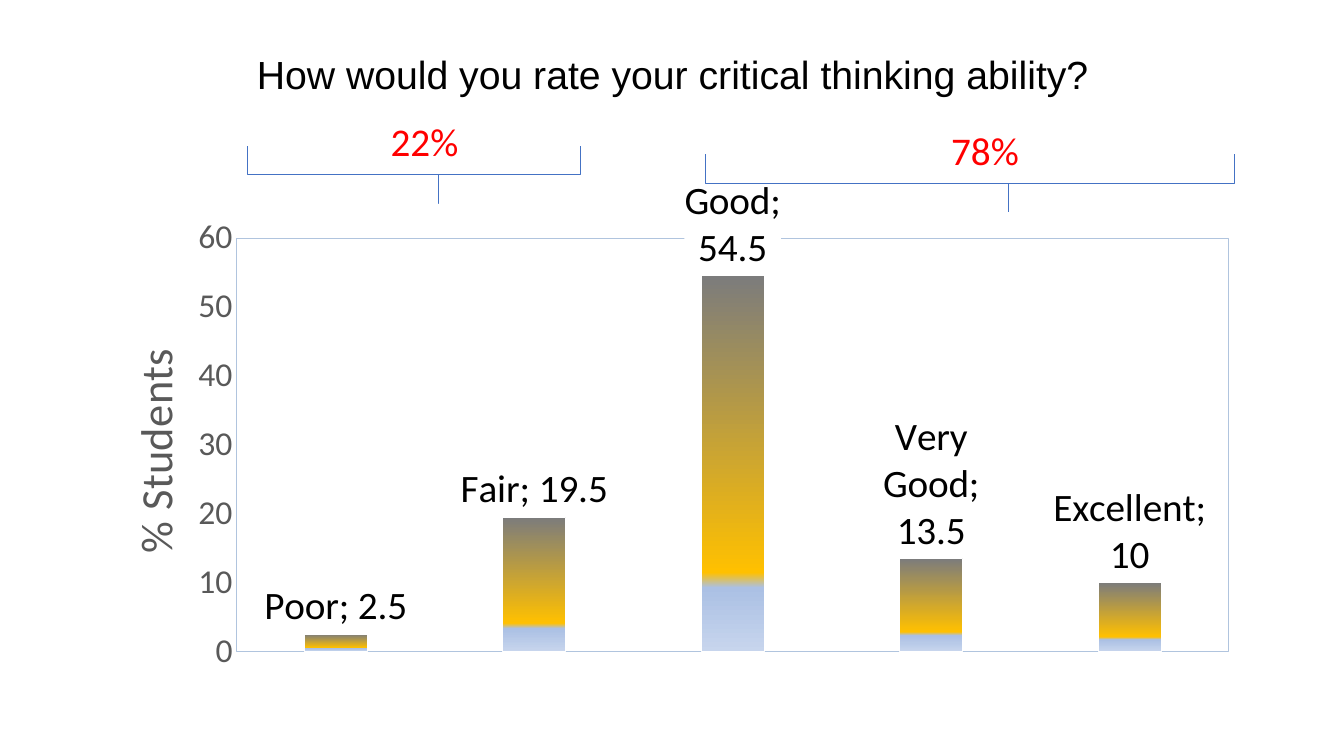
from lxml import etree
from pptx import Presentation, util as u
from pptx.chart.data import CategoryChartData
from pptx.dml.color import RGBColor
from pptx.enum import chart as ch, shapes, text
from pptx.oxml import parse_xml
from pptx.oxml.ns import qn

WIDTH, HEIGHT = u.Inches(13.33), u.Inches(7.5)
RATINGS = {"Poor": 2.5, "Fair": 19.5, "Good": 54.5, "Very Good": 13.5, "Excellent": 10}
BAR_STOPS = ((0, "7C7C7C"), (79, "FFC000"), (83, "ABC0E4"), (100, "C7D5ED"))
BAND = 7.6  # height of a brace and of its label, % of the slide


def rgb(code):
    return RGBColor.from_string(code)


def area(x, y, w, h):
    """Turn percentages of the slide into lengths."""
    return [int(share * side / 100)
            for share, side in zip((x, y, w, h), (WIDTH, HEIGHT) * 2)]


def style(font, size, color, name="Calibri"):
    font.size, font.name, font.bold = u.Pt(size), name, False
    font.color.rgb = rgb(color)


def write(tf, words, **fmt):
    tf.word_wrap = True
    p = tf.paragraphs[0]
    p.alignment = text.PP_ALIGN.CENTER
    r = p.add_run()
    r.text = words
    style(r.font, **fmt)
    return p


def add_title(s, words):
    sp = s.shapes.title
    sp.left, sp.top, sp.width, sp.height = area(6.9, 5.33, 86.27, 19.33)
    tf = sp.text_frame
    tf.vertical_anchor = text.MSO_ANCHOR.MIDDLE
    tf.margin_bottom = u.Inches(0.78)
    write(tf, words, size=28, color="000000", name="Arial").line_spacing = 0.9


def add_brace(s, label, y, brace_x, brace_w, label_x, label_w):
    """Group a percentage with the downward brace under it."""
    group = s.shapes.add_group_shape().shapes
    box = group.add_textbox(*area(label_x, y, label_w, BAND))
    write(box.text_frame, label, size=28, color="FF0000")
    x, top, span, depth = area(brace_x, y + 4.4, brace_w, BAND)
    shift = (span - depth) // 2  # the brace stands upright before its rotation
    sp = group.add_shape(shapes.MSO_SHAPE.RIGHT_BRACE,
                         x + shift, top - shift, depth, span)
    sp.rotation = 90
    sp.adjustments[0], sp.adjustments[1] = 0, 0.428
    sp.shadow.inherit = False
    sp.fill.background()
    sp.line.color.rgb = rgb("4472C4")
    sp.line.width = u.Pt(0.5)


def set_layout(parent, before, inner=False, **shares):
    """Place a chart part by shares of the chart's area."""
    for old in parent.findall(qn("c:layout")):
        parent.remove(old)
    layout = etree.Element(qn("c:layout"))
    manual = etree.SubElement(layout, qn("c:manualLayout"))
    if inner:
        etree.SubElement(manual, qn("c:layoutTarget"), val="inner")
    for side in "xy":
        etree.SubElement(manual, qn(f"c:{side}Mode"), val="edge")
    for side, share in shares.items():
        etree.SubElement(manual, qn(f"c:{side}"), val=str(share))
    if before is None:
        parent.insert(0, layout)
    else:
        before.addnext(layout)


def paint_bars(series):
    fill = series.format.fill
    fill.gradient()
    fill.gradient_angle = 270
    stops = next(series._element.iter(qn("a:gsLst")))
    for stop in list(stops):
        stops.remove(stop)
    for share, color in BAR_STOPS:
        stop = etree.SubElement(stops, qn("a:gs"), pos=str(share * 1000))
        etree.SubElement(stop, qn("a:srgbClr"), val=color)
    series.format.line.color.rgb = rgb("FFFFFF")
    series.format.line.width = u.Pt(0.75)


def label_bars(series):
    labels = series.data_labels
    labels.show_value = labels.show_category_name = True
    labels.position = ch.XL_LABEL_POSITION.OUTSIDE_END
    style(labels.font, 28, "000000")
    dlbls = labels._element
    separator = etree.Element(qn("c:separator"))
    separator.text = "; "
    dlbls.find(qn("c:showBubbleSize")).addnext(separator)
    dlbls.find(qn("c:txPr")).addprevious(parse_xml(
        '<c:spPr xmlns:c="http://schemas.openxmlformats.org/drawingml/2006/chart" '
        'xmlns:a="http://schemas.openxmlformats.org/drawingml/2006/main">'
        '<a:solidFill><a:srgbClr val="FFFFFF"/></a:solidFill></c:spPr>'))


def format_value_axis(axis):
    axis.minimum_scale, axis.maximum_scale, axis.major_unit = 0, 60, 10
    axis.has_major_gridlines = False
    axis.major_tick_mark = ch.XL_TICK_MARK.NONE
    axis.format.line.fill.background()
    style(axis.tick_labels.font, 24, "595959")
    title = axis.axis_title
    write(title.text_frame, "% Students", size=32, color="595959")
    body = next(title._element.iter(qn("a:bodyPr")))
    body.set("rot", "-5400000")
    body.set("vert", "horz")
    set_layout(title._element, title._element.find(qn("c:tx")), x=0.02, y=0.32)


def frame_plot(plot_area):
    set_layout(plot_area, None, inner=True, x=0.124, y=0.11, w=0.856, h=0.832)
    plot_area.append(parse_xml(
        '<c:spPr xmlns:c="http://schemas.openxmlformats.org/drawingml/2006/chart" '
        'xmlns:a="http://schemas.openxmlformats.org/drawingml/2006/main">'
        '<a:noFill/><a:ln w="9525"><a:solidFill><a:srgbClr val="B0C4DE"/>'
        '</a:solidFill></a:ln></c:spPr>'))


def add_ratings_chart(s):
    data = CategoryChartData()
    data.categories = list(RATINGS)
    data.add_series("Series 1", list(RATINGS.values()))
    chart = s.shapes.add_chart(ch.XL_CHART_TYPE.COLUMN_CLUSTERED,
                               *area(6.9, 23.6, 86.27, 66.4), data).chart
    chart.has_title = chart.has_legend = False
    style(chart.font, 10, "000000")
    chart.category_axis.visible = False
    format_value_axis(chart.value_axis)
    plot = chart.plots[0]
    plot.gap_width, plot.overlap, plot.vary_by_categories = 214, -27, False
    paint_bars(plot.series[0])
    label_bars(plot.series[0])
    frame_plot(next(chart._chartSpace.iter(qn("c:plotArea"))))


def main():
    prs = Presentation()
    prs.slide_width, prs.slide_height = WIDTH, HEIGHT
    s = prs.slides.add_slide(prs.slide_layouts[5])
    add_title(s, "How would you rate your critical thinking ability?")
    add_ratings_chart(s)
    # Shares of students below and from "Good" upwards
    add_brace(s, "78%", y=16, brace_x=52.49, brace_w=39.38, label_x=54.76, label_w=37.06)
    add_brace(s, "22%", y=14.93, brace_x=18.38, brace_w=24.83, label_x=19.88, label_w=23.41)
    prs.save("out.pptx")


if __name__ == "__main__":
    main()
